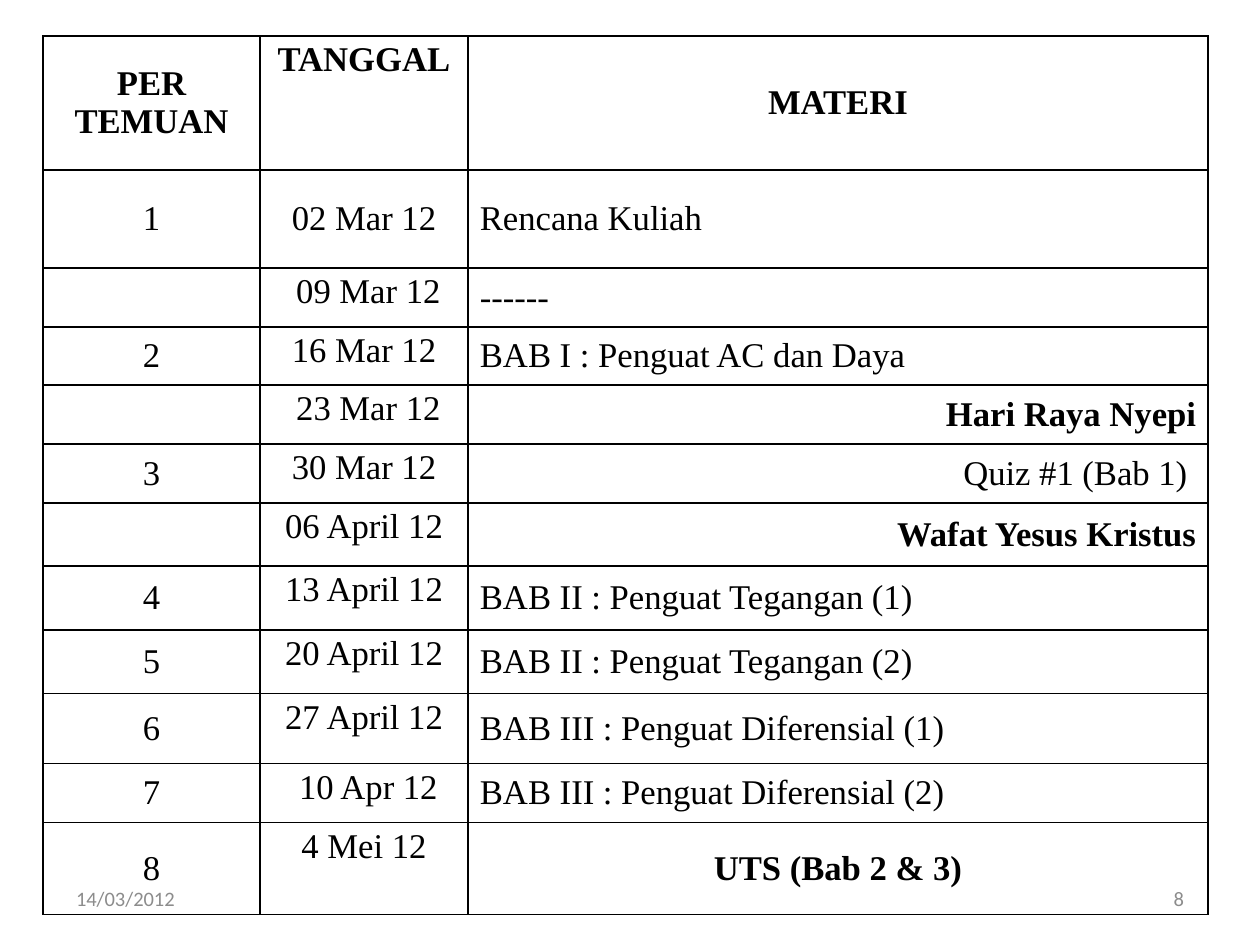
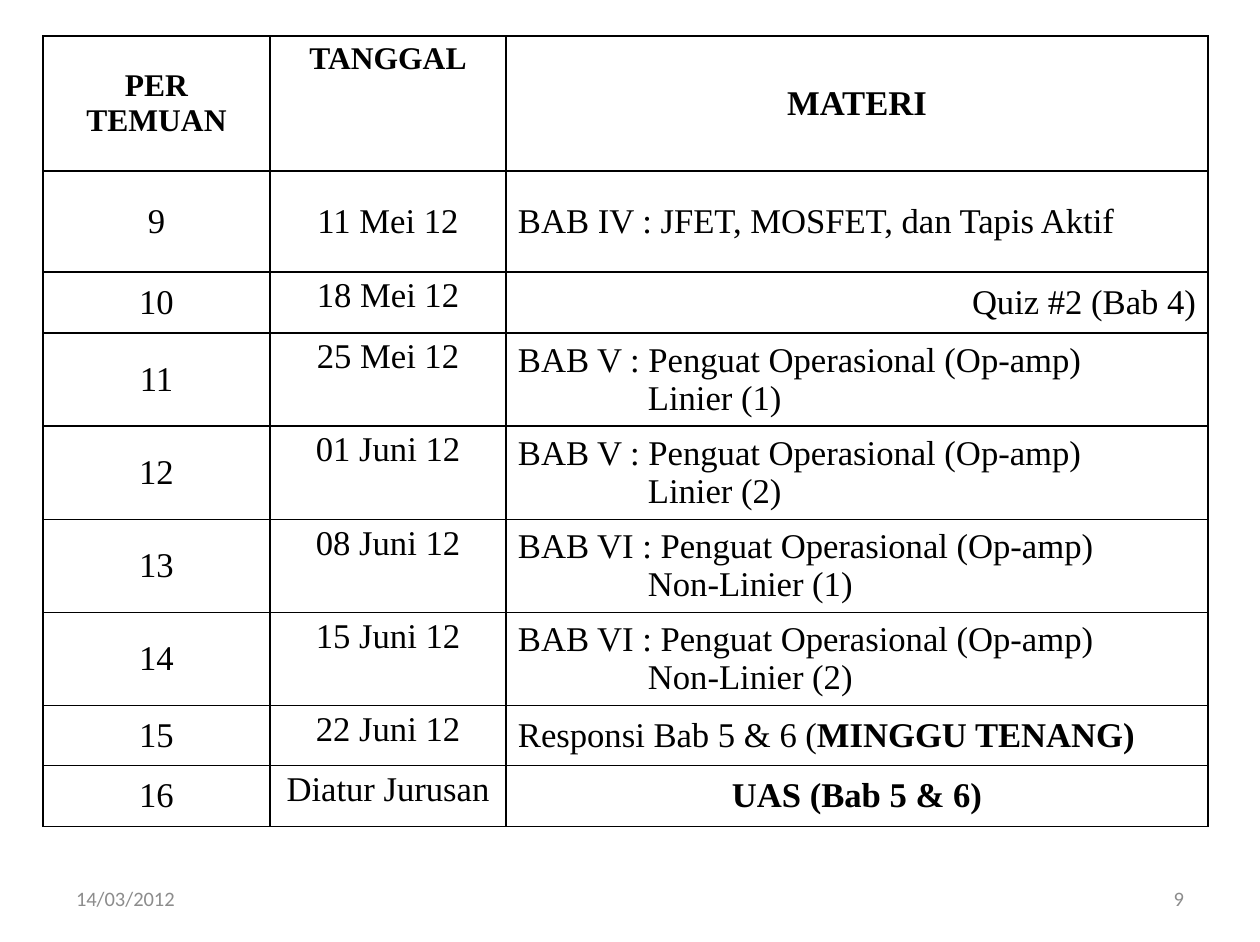
from lxml import etree
from pptx import Presentation
from pptx import util as u
from pptx.dml.color import RGBColor
from pptx.enum import text
from pptx.oxml.ns import qn

PX = u.Inches(1) / 113.5
BLACK = RGBColor(0x00, 0x00, 0x00)
GRAY = RGBColor(0x8C, 0x8C, 0x8C)
LEFT, CENTER, RIGHT = text.PP_ALIGN.LEFT, text.PP_ALIGN.CENTER, text.PP_ALIGN.RIGHT
TOP, MIDDLE = text.MSO_ANCHOR.TOP, text.MSO_ANCHOR.MIDDLE
DATE = "14/03/2012"
HEADINGS = ["PER\nTEMUAN", "TANGGAL", "MATERI"]
CONTINUATION_INDENT = 130

SCHEDULES = [
    {
        "page": "8",
        "columns": [217, 208, 740],
        "heights": [134, 98, 59, 58, 59, 59, 63, 64, 64, 70, 59, 92],
        "heading_sizes": [22, 22, 22],
        "meetings": [
            ("1", "02 Mar 12", LEFT, [("Rencana Kuliah", "")]),
            ("", " 09 Mar 12", LEFT, [("------", "italic")]),
            ("2", "16 Mar 12", LEFT, [("BAB I : Penguat AC dan Daya", "")]),
            ("", " 23 Mar 12", RIGHT, [("Hari Raya Nyepi", "bold")]),
            ("3", "30 Mar 12", RIGHT, [("Quiz #1 (Bab 1) ", "")]),
            ("", "06 April 12", RIGHT, [("Wafat Yesus Kristus", "bold")]),
            ("4", "13 April 12", LEFT, [("BAB II : Penguat Tegangan (1)", "")]),
            ("5", "20 April 12", LEFT, [("BAB II : Penguat Tegangan (2)", "")]),
            ("6", "27 April 12", LEFT, [("BAB III : Penguat Diferensial (1)", "")]),
            ("7", " 10 Apr 12", LEFT, [("BAB III : Penguat Diferensial (2)", "")]),
            ("8", "4 Mei 12", CENTER, [("UTS (Bab 2 & 3)", "bold")]),
        ],
    },
    {
        "page": "9",
        "columns": [227, 236, 702],
        "heights": [135, 101, 61, 90, 90, 90, 91, 60, 61],
        "heading_sizes": [20, 20, 22],
        "meetings": [
            ("9", "11 Mei 12", LEFT, [("BAB IV : JFET, MOSFET, dan Tapis Aktif", "")]),
            ("10", "18 Mei 12", RIGHT, [("Quiz #2 (Bab 4)", "")]),
            ("11", "25 Mei 12", LEFT, [("BAB V : Penguat Operasional (Op-amp)\nLinier (1)", "")]),
            ("12", "01 Juni 12", LEFT, [("BAB V : Penguat Operasional (Op-amp)\nLinier (2)", "")]),
            ("13", "08 Juni 12", LEFT, [("BAB VI : Penguat Operasional (Op-amp)\nNon-Linier (1)", "")]),
            ("14", "15 Juni 12", LEFT, [("BAB VI : Penguat Operasional (Op-amp)\nNon-Linier (2)", "")]),
            ("15", "22 Juni 12", LEFT, [("Responsi Bab 5 & 6 (", ""), ("MINGGU TENANG)", "bold")]),
            ("16", "Diatur Jurusan", CENTER, [("UAS (Bab 5 & 6)", "bold")]),
        ],
    },
]


def px(length):
    return u.Emu(round(length * PX))


def write(frame, runs, alignment, size, font="Times New Roman", color=BLACK):
    paragraph = frame.paragraphs[0]
    paragraph.alignment = alignment
    for words, style in runs:
        for number, line in enumerate(words.split("\n")):
            if number:
                paragraph = frame.add_paragraph()
                paragraph.alignment = alignment
                if alignment == LEFT:
                    properties = paragraph._p.get_or_add_pPr()
                    properties.set("marL", str(px(CONTINUATION_INDENT)))
            run = paragraph.add_run()
            run.text = line
            run.font.name = font
            run.font.size = u.Pt(size)
            run.font.bold = style == "bold"
            run.font.italic = style == "italic"
            run.font.color.rgb = color


presentation = Presentation()
presentation.slide_width = px(1260)
presentation.slide_height = px(942)

for schedule in SCHEDULES:
    slide = presentation.slides.add_slide(presentation.slide_layouts[6])

    for words, left, alignment in [(DATE, 64, LEFT), (schedule["page"], 902, RIGHT)]:
        footer = slide.shapes.add_textbox(px(left), px(873), px(294), px(50))
        frame = footer.text_frame
        frame.word_wrap = True
        frame.vertical_anchor = MIDDLE
        frame.margin_left = frame.margin_right = px(12)
        frame.margin_top = frame.margin_bottom = px(6)
        write(frame, [(words, "")], alignment, 13, "Calibri", GRAY)

    columns, heights = schedule["columns"], schedule["heights"]
    shape = slide.shapes.add_table(
        len(heights), len(columns), px(43), px(36), px(sum(columns)), px(sum(heights)))
    table = shape.table
    table.first_row = table.horz_banding = False
    for column, width in zip(table.columns, columns):
        column.width = px(width)
    for row, height in zip(table.rows, heights):
        row.height = px(height)

    for cell in table.iter_cells():
        cell.margin_left = cell.margin_right = px(12)
        cell.margin_top = cell.margin_bottom = px(5)
        cell.vertical_anchor = MIDDLE
        properties = cell._tc.get_or_add_tcPr()
        for side in ("a:lnL", "a:lnR", "a:lnT", "a:lnB"):
            border = etree.SubElement(properties, qn(side), w=str(u.Pt(1)))
            fill = etree.SubElement(border, qn("a:solidFill"))
            etree.SubElement(fill, qn("a:srgbClr"), val=str(BLACK))
        cell.fill.background()

    for index, (heading, size) in enumerate(zip(HEADINGS, schedule["heading_sizes"])):
        write(table.cell(0, index).text_frame, [(heading, "bold")], CENTER, size)
    table.cell(0, 1).vertical_anchor = TOP

    for index, (number, date, alignment, topic) in enumerate(schedule["meetings"], 1):
        if number:
            write(table.cell(index, 0).text_frame, [(number, "")], CENTER, 22)
        write(table.cell(index, 1).text_frame, [(date, "")], CENTER, 22)
        write(table.cell(index, 2).text_frame, topic, alignment, 22)
        if index > 1:
            table.cell(index, 1).vertical_anchor = TOP

presentation.save("out.pptx")
